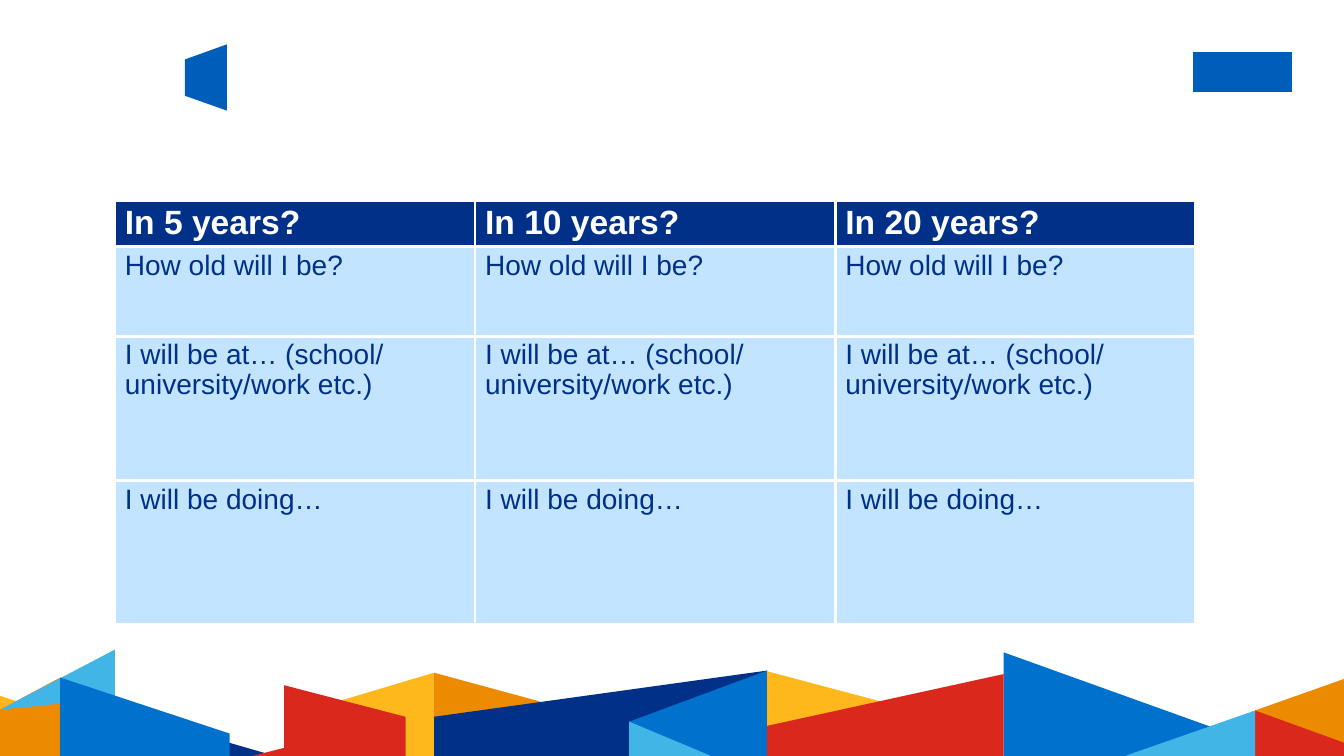
from dataclasses import dataclass

from lxml.etree import SubElement
from pptx import Presentation
from pptx.dml.color import RGBColor
from pptx.oxml.ns import qn
from pptx.util import Pt


@dataclass(frozen=True)
class Theme:
    font: str = "Arial"
    head: int = 24
    body: int = 20
    rule: float = 2.25
    white: str = "FFFFFF"
    navy: str = "003087"
    blue: str = "0072CE"
    badge: str = "005EBB"
    sky: str = "41B6E6"
    pale: str = "C2E4FF"
    red: str = "DA291C"
    gold: str = "FFB81C"
    amber: str = "ED8B00"


THEME = Theme()
WIDTH, FLOOR = 960, 540

PANELS_BACK = [
    (310, 385.5, 480.5, 501, THEME.amber),
    (310, 548, 512, 479, THEME.navy),
    (896.5, WIDTH, 507.5, 485, THEME.amber),
    (0, 68.5, 497, 520, THEME.gold),
    (203, 310, 512.5, 480.5, THEME.gold),
    (0, 43, 507, 484, THEME.amber),
    (203, 289.5, 489.5, 512, THEME.red),
    (127, 196.5, 520, FLOOR, THEME.navy),
    (180, 289.5, FLOOR, 512.5, THEME.red),
]
SHARD = [(0, 507), (82, 464), (82, 498.5)]
PANELS_FRONT = [
    (43, 164, 484, 524, THEME.blue),
    (449.5, 548, 515.5, 479, THEME.blue),
    (449.5, 508, 515.5, FLOOR, THEME.sky),
    (717, 896.5, 466, 530.5, THEME.blue),
    (896.5, WIDTH, 507.5, 530.5, THEME.red),
    (803.5, 896.5, FLOOR, 507.5, THEME.sky),
    (548, 642, 479.5, 504.5, THEME.gold),
    (548, 717, 518.5, 481.5, THEME.red),
]
DOOR = [(132, 42.5), (162, 31.7), (162, 79), (132, 68.4)]
BADGE = [(852.5, 37.5), (923, 37.5), (923, 65.5), (852.5, 65.5)]

YEARS = [5, 10, 20]
PROMPTS = [
    "How old will I be?",
    "I will be at… (school/ university/work etc.)",
    "I will be doing…",
]
HEIGHTS = [24, 64, 103, 103]


def add_shape(slide, points, color):
    start, *rest = [(Pt(x), Pt(y)) for x, y in points]
    pen = slide.shapes.build_freeform(*start)
    pen.add_line_segments(rest, close=True)
    shape = pen.convert_to_shape()
    shape.shadow.inherit = False
    shape.fill.solid()
    shape.fill.fore_color.rgb = RGBColor.from_string(color)
    shape.line.fill.background()


def add_panel(slide, left, right, rise, fall, color):
    points = [(left, FLOOR), (left, rise), (right, fall), (right, FLOOR)]
    add_shape(slide, list(dict.fromkeys(points)), color)


def add_rules(cell):
    props = cell._tc.get_or_add_tcPr()
    for spot, side in enumerate(("a:lnL", "a:lnR", "a:lnT", "a:lnB")):
        line = props.makeelement(qn(side), {"w": str(Pt(THEME.rule))})
        props.insert(spot, line)
        fill = SubElement(line, qn("a:solidFill"))
        SubElement(fill, qn("a:srgbClr"), val=THEME.white)


def fill_cell(cell, text, is_head):
    cell.fill.solid()
    cell.fill.fore_color.rgb = RGBColor.from_string(
        THEME.navy if is_head else THEME.pale)
    add_rules(cell)
    para = cell.text_frame.paragraphs[0]
    para.line_spacing = 0.95
    run = para.add_run()
    run.text = text
    run.font.name = THEME.font
    run.font.size = Pt(THEME.head if is_head else THEME.body)
    run.font.bold = is_head
    run.font.color.rgb = RGBColor.from_string(
        THEME.white if is_head else THEME.navy)


def add_grid(slide):
    frame = slide.shapes.add_table(
        len(HEIGHTS), len(YEARS), Pt(82), Pt(143.5), Pt(772), Pt(sum(HEIGHTS)))
    table = frame.table
    for row, height in zip(table.rows, HEIGHTS):
        row.height = Pt(height)
    for col, year in enumerate(YEARS):
        for row, text in enumerate([f"In {year} years?", *PROMPTS]):
            fill_cell(table.cell(row, col), text, row == 0)


def main():
    deck = Presentation()
    deck.slide_width, deck.slide_height = Pt(WIDTH), Pt(FLOOR)
    slide = deck.slides.add_slide(deck.slide_layouts[6])
    add_shape(slide, DOOR, THEME.badge)
    add_shape(slide, BADGE, THEME.badge)
    for panel in PANELS_BACK:
        add_panel(slide, *panel)
    add_shape(slide, SHARD, THEME.sky)
    for panel in PANELS_FRONT:
        add_panel(slide, *panel)
    add_grid(slide)
    deck.save("out.pptx")


if __name__ == "__main__":
    main()
